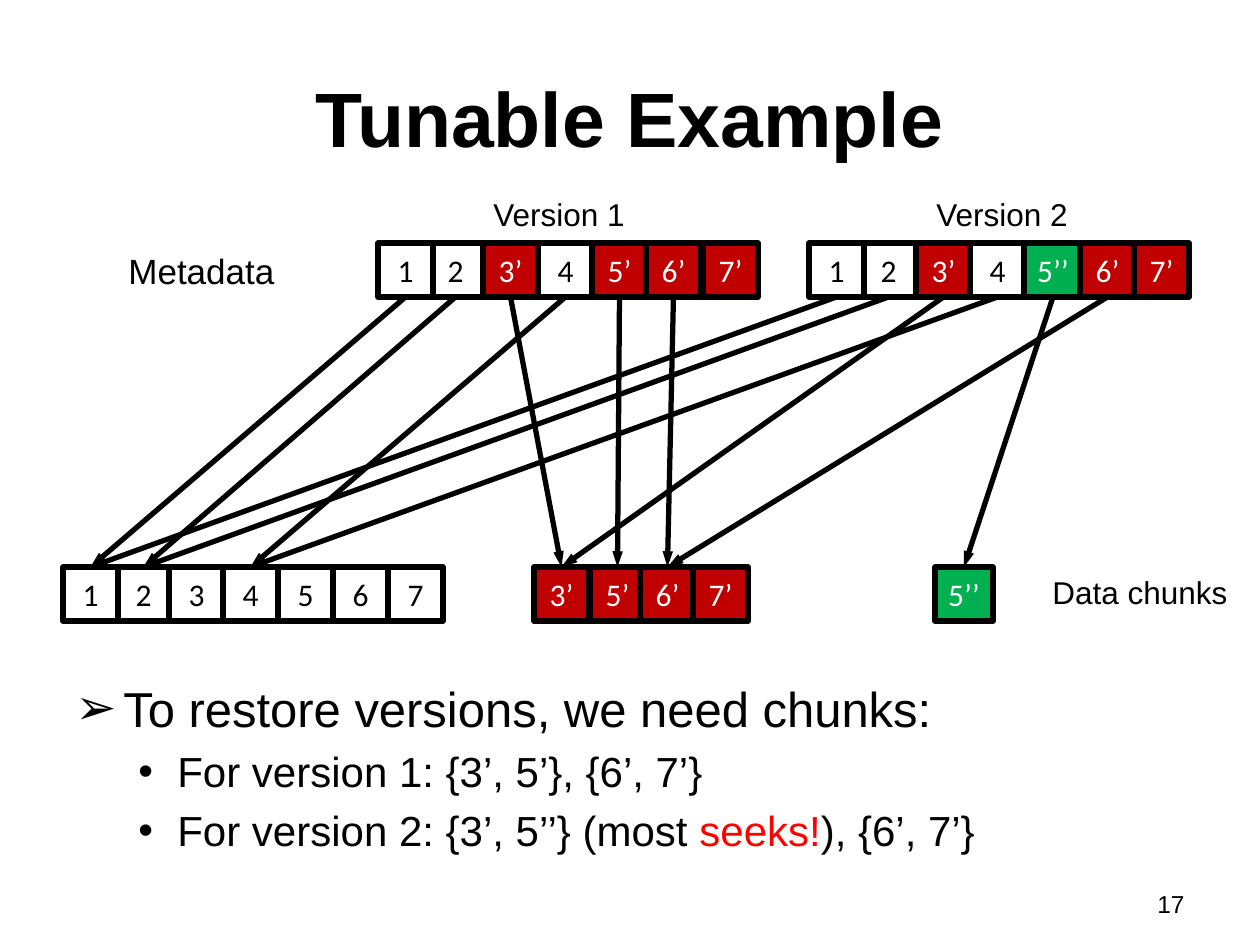
"""Build the slide that maps version metadata to stored data chunks."""
from dataclasses import dataclass
from typing import Any

from lxml import etree
from pptx import Presentation
from pptx import util as u
from pptx.dml import color
from pptx.enum import shapes, text
from pptx.oxml import ns

SCALE = 914400 / 126
COLORS = {"black": "000000", "white": "FFFFFF", "red": "C00000",
          "green": "00B050", "alert": "FF0000"}
CELL_WIDTHS = {"white": 55, "red": 55, "green": 58}
CELL_HEIGHT = 54
METADATA_TOP, CHUNK_TOP = 243, 567
CENTER, RIGHT = text.PP_ALIGN.CENTER, text.PP_ALIGN.RIGHT
MIDDLE, TOP = text.MSO_ANCHOR.MIDDLE, text.MSO_ANCHOR.TOP


@dataclass(frozen=True)
class Row:
    top: int
    labels: str
    lefts: tuple[int, ...]


@dataclass(frozen=True)
class Label:
    words: str
    box: tuple[int, int, int, int]
    size: int
    bold: bool = False
    align: Any = None
    anchor: Any = TOP
    wrap: bool = True


@dataclass(frozen=True)
class Bullet:
    mark: str
    runs: tuple[tuple[str, str], ...]
    size: int
    margin: int
    hanging: int
    level: int
    space_before: int


VERSIONS = (
    Row(METADATA_TOP, "1 2 3’ 4 5’ 6’ 7’", (378, 428, 483, 538, 592, 646, 703)),
    Row(METADATA_TOP, "1 2 3’ 4 5’’ 6’ 7’", (809, 861, 916, 970, 1024, 1080, 1134)),
)
STORED = (
    Row(CHUNK_TOP, "1 2 3 4 5 6 7", (63, 116, 169, 223, 278, 333, 388)),
    Row(CHUNK_TOP, "3’ 5’ 6’ 7’", (534, 590, 640, 693)),
    Row(CHUNK_TOP, "5’’", (935,)),
)
LINKED = ("1 2 3’ 4 5’ 6’", "1 2 3’ 4 5’’ 6’")
LABELS = (
    Label("Tunable Example", (63, 38, 1134, 158), 44, True, CENTER, MIDDLE),
    Label("Version 1", (481, 189, 158, 50), 18, wrap=False),
    Label("Version 2", (924, 189, 158, 50), 18, wrap=False),
    Label("Metadata", (116, 243, 200, 55), 20),
    Label("Data chunks", (1040, 567, 210, 50), 18),
    Label("17", (903, 882, 294, 44), 14, align=RIGHT, anchor=MIDDLE),
)
BODY_BOX = (63, 672, 1134, 210)
BULLETS = (
    Bullet("➢", (("To restore versions, we need chunks:", "black"),), 28, 48, 48, 0, 4),
    Bullet("•", (("For version 1: {3’, 5’}, {6’, 7’}", "black"),), 24, 102, 39, 1, 5),
    Bullet("•", (("For version 2: {3’, 5’’} (most ", "black"), ("seeks!", "alert"),
                 ("), {6’, 7’}", "black")), 24, 102, 39, 1, 5),
)


def px(length: int) -> u.Emu:
    """Turn pixels into EMU."""
    return u.Emu(round(length * SCALE))


def rgb(name: str) -> color.RGBColor:
    """Look up a named colour."""
    return color.RGBColor.from_string(COLORS[name])


def apply_format(target: Any, values: dict[str, Any]) -> None:
    """Set each attribute given in values."""
    for name, value in values.items():
        setattr(target, name, value)


def add_run(paragraph: Any, words: str, size: int, ink: str,
            font: str = "Arial", bold: bool = False) -> None:
    """Append one formatted run."""
    run = paragraph.add_run()
    run.text = words
    apply_format(run.font, {"name": font, "size": u.Pt(size), "bold": bold})
    run.font.color.rgb = rgb(ink)


def add_label(slide: Any, label: Label) -> None:
    """Draw a one-line text box."""
    frame = slide.shapes.add_textbox(*map(px, label.box)).text_frame
    apply_format(frame, {"word_wrap": label.wrap, "vertical_anchor": label.anchor})
    paragraph = frame.paragraphs[0]
    paragraph.alignment = label.align
    add_run(paragraph, label.words, label.size, "black", bold=label.bold)


def add_cell(slide: Any, words: str, left: int, top: int) -> Any:
    """Draw one chunk cell, coloured by its number of primes."""
    fill = ("white", "red", "green")[words.count("’")]
    box = (left, top, CELL_WIDTHS[fill], CELL_HEIGHT)
    shape = slide.shapes.add_shape(shapes.MSO_SHAPE.RECTANGLE, *map(px, box))
    shape.shadow.inherit = False
    shape.fill.solid()
    shape.fill.fore_color.rgb = rgb(fill)
    shape.line.color.rgb = rgb("black")
    shape.line.width = u.Pt(3)
    apply_format(shape.text_frame, {"word_wrap": True, "vertical_anchor": MIDDLE,
                                    "margin_left": 0, "margin_right": 0})
    paragraph = shape.text_frame.paragraphs[0]
    paragraph.alignment = CENTER
    add_run(paragraph, words, 18, "black" if fill == "white" else "white", "Calibri")
    return shape


def add_row(slide: Any, row: Row) -> dict[str, Any]:
    """Draw a row with its first cell on top and return the cells by label."""
    cells = list(zip(row.labels.split(), row.lefts))
    return {words: add_cell(slide, words, left, row.top)
            for words, left in cells[1:] + cells[:1]}


def add_arrow(slide: Any, source: Any, target: Any) -> None:
    """Connect the bottom of a metadata cell to the top of its chunk."""
    arrow = slide.shapes.add_connector(shapes.MSO_CONNECTOR.STRAIGHT, 0, 0, 0, 0)
    arrow.begin_connect(source, 2)
    arrow.end_connect(target, 0)
    arrow.line.color.rgb = rgb("black")
    arrow.line.width = u.Pt(3)
    etree.SubElement(arrow.line._get_or_add_ln(), ns.qn("a:tailEnd"),
                     type="triangle", w="sm", len="med")
    etree.SubElement(arrow._element.spPr, ns.qn("a:effectLst"))


def add_bullets(slide: Any) -> None:
    """Draw the bulleted body text."""
    frame = slide.shapes.add_textbox(*map(px, BODY_BOX)).text_frame
    frame.word_wrap = True
    for index, bullet in enumerate(BULLETS):
        paragraph = frame.add_paragraph() if index else frame.paragraphs[0]
        apply_format(paragraph, {"level": bullet.level,
                                 "space_before": u.Pt(bullet.space_before)})
        properties = paragraph._p.get_or_add_pPr()
        properties.set("marL", str(px(bullet.margin)))
        properties.set("indent", str(-px(bullet.hanging)))
        etree.SubElement(properties, ns.qn("a:buFont"), typeface="Arial")
        etree.SubElement(properties, ns.qn("a:buChar"), char=bullet.mark)
        for words, ink in bullet.runs:
            add_run(paragraph, words, bullet.size, ink)


def main() -> None:
    """Assemble and save the presentation."""
    presentation = Presentation()
    apply_format(presentation, {"slide_width": px(1260), "slide_height": px(945)})
    slide = presentation.slides.add_slide(presentation.slide_layouts[6])
    chunks = {}
    for row in STORED:
        chunks.update(add_row(slide, row))
    versions = [add_row(slide, row) for row in VERSIONS]
    for cells, linked in zip(versions, LINKED):
        for words in linked.split():
            add_arrow(slide, cells[words], chunks[words])
    for label in LABELS:
        add_label(slide, label)
    add_bullets(slide)
    presentation.save("out.pptx")


if __name__ == "__main__":
    main()
